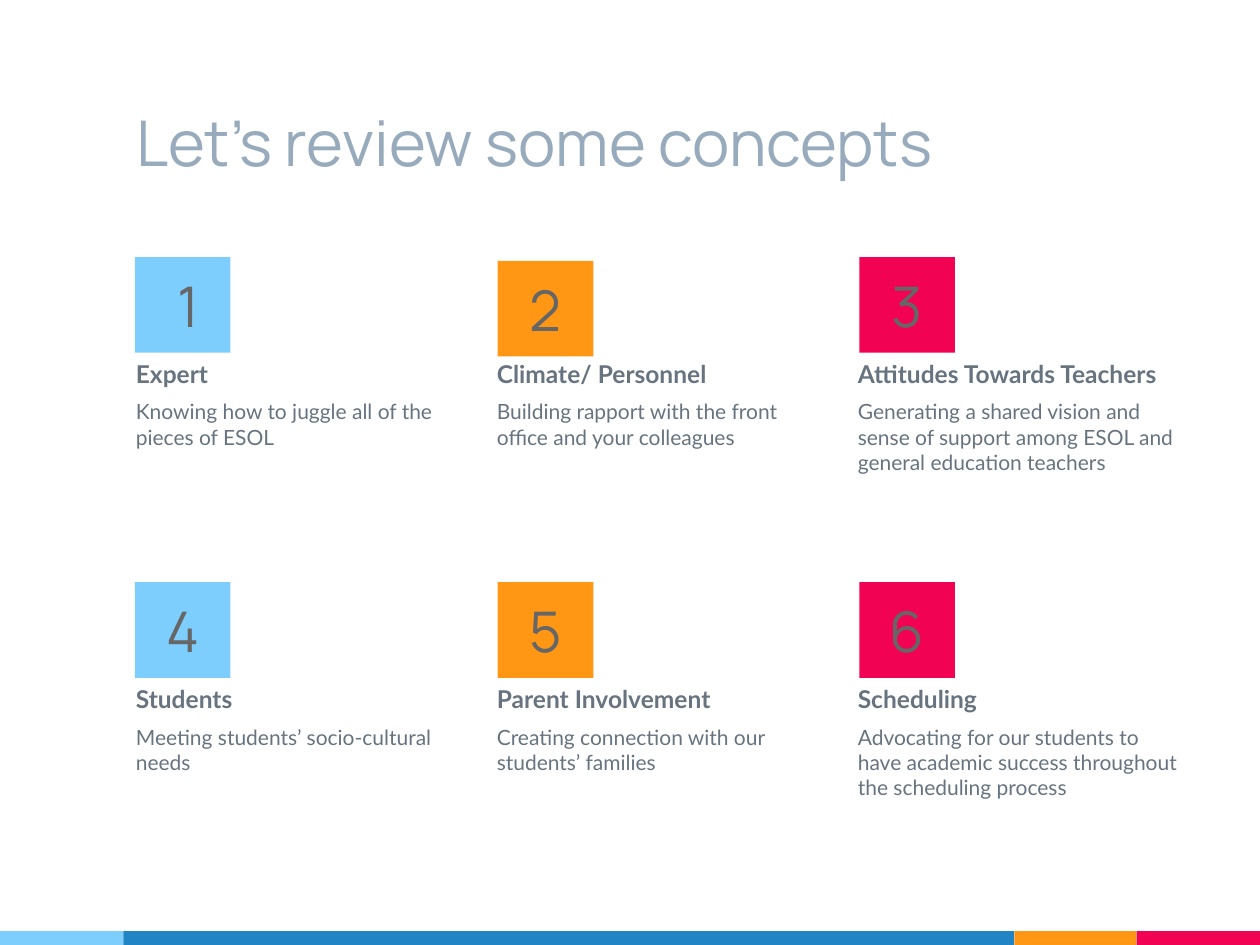
import pptx
import pptx.dml.color
import pptx.enum.shapes
import pptx.enum.text
import pptx.util

SKY, BLUE, ORANGE, RED = "7ECEFD", "2185C5", "FF9715", "F20253"
TITLE = "Let’s review some concepts"
CONCEPTS = [
    (" 1", "Expert", "Knowing how to juggle all of the pieces of ESOL"),
    ("2", "Climate/ Personnel",
     "Building rapport with the front office and your colleagues"),
    ("3", "Attitudes Towards Teachers",
     "Generating a shared vision and sense of support among ESOL and general education teachers"),
    ("4", "Students", "Meeting students’ socio-cultural needs"),
    ("5", "Parent Involvement", "Creating connection with our students’ families"),
    ("6", "Scheduling",
     "Advocating for our students to have academic success throughout the scheduling process"),
]
TILE_COLORS = [SKY, ORANGE, RED]
TILE_LEFTS = [1.07, 3.95, 6.82]
TILE_NUDGES = {"2": 0.03}
FOOTER = [(SKY, 0.98), (BLUE, 7.07), (ORANGE, 0.97), (RED, 0.98)]

WIDTH, HEIGHT = 10, 7.5
LEFT, TOP = 0.98, 2.75
COL_STEP, ROW_STEP = 2.865, 2.58
TEXT_W, WIDE_TEXT_W, TEXT_H = 2.72, 2.81, 1.9
TILE, TILE_RISE = 0.76, 0.71
FOOTER_H = 0.11


def inches(*values):
    return [pptx.util.Inches(v) for v in values]


def rgb(value):
    return pptx.dml.color.RGBColor.from_string(value)


def style(p, font, size, color, bold=False):
    p.font.name, p.font.size, p.font.bold = font, pptx.util.Pt(size), bold
    p.font.color.rgb = rgb(color)


def frame(s, anchor):
    tf = s.text_frame
    tf.word_wrap = True
    tf.auto_size = pptx.enum.text.MSO_AUTO_SIZE.NONE
    tf.vertical_anchor = anchor
    margin = pptx.util.Inches(0.1)
    tf.margin_left = tf.margin_right = tf.margin_top = tf.margin_bottom = margin
    return tf


def add_rect(slide, box, color):
    s = slide.shapes.add_shape(pptx.enum.shapes.MSO_SHAPE.RECTANGLE, *inches(*box))
    s.shadow.inherit = False
    s.fill.solid()
    s.fill.fore_color.rgb = rgb(color)
    s.line.fill.background()
    return s


def add_footer(slide):
    x = 0
    for color, width in FOOTER:
        add_rect(slide, (x, HEIGHT - FOOTER_H, width, FOOTER_H), color)
        x += width


def add_title(slide):
    s = slide.shapes.title
    s.left, s.top, s.width, s.height = inches(LEFT, 0.27, 7.07, 1.25)
    tf = frame(s, pptx.enum.text.MSO_ANCHOR.BOTTOM)
    tf.text = TITLE
    p = tf.paragraphs[0]
    p.alignment = pptx.enum.text.PP_ALIGN.LEFT
    style(p, "Manrope", 36, "97ABBC")


def add_concept(slide, index, number, heading, detail):
    row, col = divmod(index, len(TILE_LEFTS))
    y = TOP + row * ROW_STEP
    width = WIDE_TEXT_W if number == "6" else TEXT_W
    s = slide.shapes.add_textbox(*inches(LEFT + col * COL_STEP, y, width, TEXT_H))
    tf = frame(s, pptx.enum.text.MSO_ANCHOR.TOP)
    tf.text = f"{heading}\n{detail}"
    for p, size, bold in zip(tf.paragraphs, (14, 12), (True, False)):
        p.space_before = pptx.util.Pt(6)
        style(p, "Lato", size, "677480", bold)

    tile_y = y - TILE_RISE + TILE_NUDGES.get(number, 0)
    s = add_rect(slide, (TILE_LEFTS[col], tile_y, TILE, TILE), TILE_COLORS[col])
    tf = frame(s, pptx.enum.text.MSO_ANCHOR.MIDDLE)
    tf.text = number
    p = tf.paragraphs[0]
    p.alignment = pptx.enum.text.PP_ALIGN.CENTER
    style(p, "Manrope", 32, "666666")


def main():
    prs = pptx.Presentation()
    prs.slide_width, prs.slide_height = inches(WIDTH, HEIGHT)
    slide = prs.slides.add_slide(prs.slide_layouts[5])
    add_footer(slide)
    add_title(slide)
    for index, concept in enumerate(CONCEPTS):
        add_concept(slide, index, *concept)
    prs.save("out.pptx")


if __name__ == "__main__":
    main()
